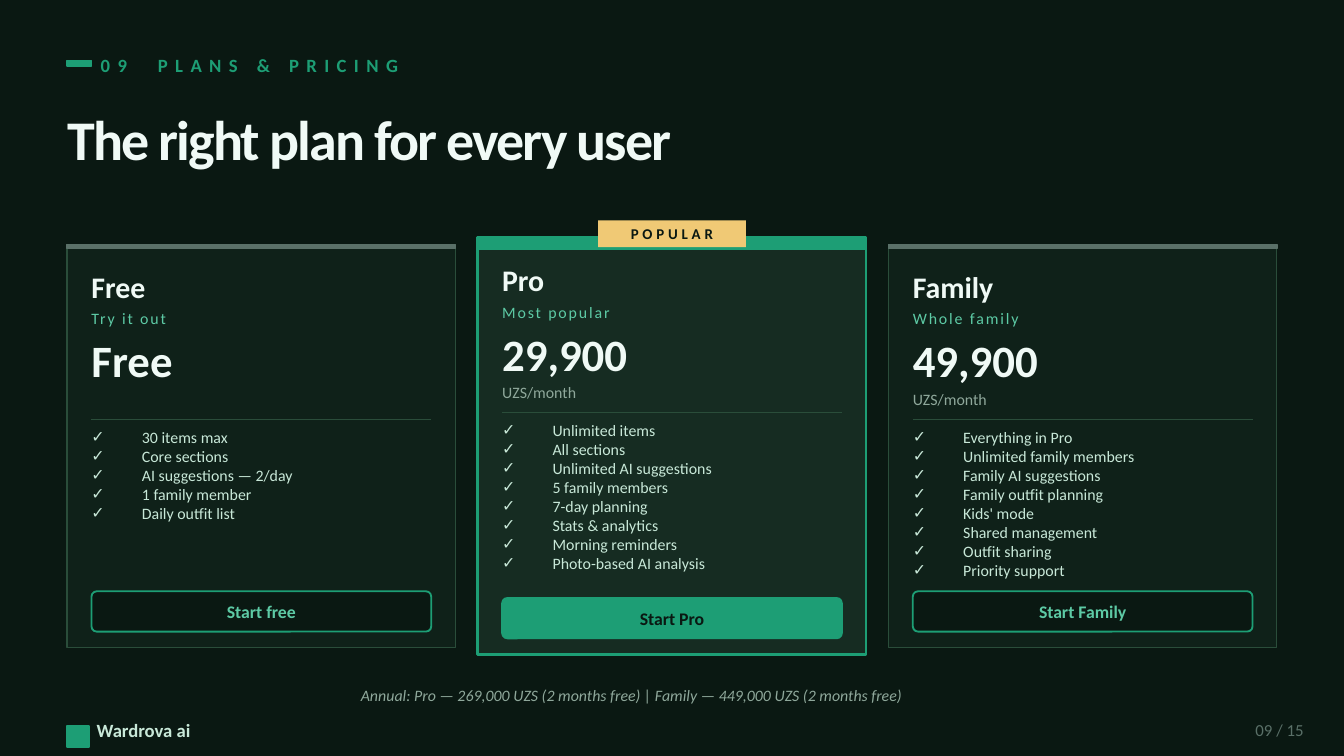
from dataclasses import dataclass

from lxml import etree
from pptx import Presentation
from pptx.dml.color import RGBColor
from pptx.enum import shapes, text
from pptx.oxml import ns
from pptx.util import Pt


@dataclass(frozen=True)
class Theme:
    font: str = "Calibri"
    background: str = "0A1812"
    card: str = "0F2119"
    featured_card: str = "162C22"
    border: str = "2A4D3A"
    accent: str = "1D9E75"
    mint: str = "5DCAA5"
    gold: str = "F0C975"
    white: str = "F0FAF6"
    pale: str = "C8E8D8"
    muted: str = "8FA89B"
    dim: str = "5A7068"
    title_size: float = 30
    price_size: float = 24
    name_size: float = 16
    label_size: float = 10
    button_size: float = 9.5
    page_size: float = 9
    body_size: float = 8.5
    badge_size: float = 8


theme = Theme()
LEFT, CENTER, RIGHT = text.PP_ALIGN.LEFT, text.PP_ALIGN.CENTER, text.PP_ALIGN.RIGHT
RECTANGLE, ROUNDED = shapes.MSO_SHAPE.RECTANGLE, shapes.MSO_SHAPE.ROUNDED_RECTANGLE


def write(shape, content, size, color, bold=False, align=LEFT, tracking=0, italic=False, bullet=None, tab=None):
    frame = shape.text_frame
    frame.text = content
    frame.word_wrap = True
    frame.auto_size = text.MSO_AUTO_SIZE.NONE
    frame.vertical_anchor = text.MSO_ANCHOR.TOP if bullet else text.MSO_ANCHOR.MIDDLE
    frame.margin_left = frame.margin_right = frame.margin_top = frame.margin_bottom = 0
    for paragraph in frame.paragraphs:
        paragraph.alignment = align
        paragraph.space_before = Pt(0)
        properties = paragraph._p.get_or_add_pPr()
        if bullet:
            properties.set("marL", str(Pt(27)))
            properties.set("indent", str(Pt(-27)))
            etree.SubElement(properties, ns.qn("a:buChar"), char=bullet)
        if tab:
            tabs = etree.SubElement(properties, ns.qn("a:tabLst"))
            etree.SubElement(tabs, ns.qn("a:tab"), pos=str(Pt(tab)), algn="l")
        paragraph.font.name = theme.font
        paragraph.font.size = Pt(size)
        paragraph.font.bold = bold
        paragraph.font.italic = italic
        paragraph.font.color.rgb = RGBColor.from_string(color)
        if tracking:
            for run in paragraph.runs:
                run._r.get_or_add_rPr().set("spc", str(tracking * 100))


def block(left, top, width, height, fill, line=None, weight=1, kind=RECTANGLE):
    shape = slide.shapes.add_shape(kind, Pt(left), Pt(top), Pt(width), Pt(height))
    shape.shadow.inherit = False
    shape.fill.solid()
    shape.fill.fore_color.rgb = RGBColor.from_string(fill)
    if line:
        shape.line.color.rgb = RGBColor.from_string(line)
        shape.line.width = Pt(weight)
    else:
        shape.line.fill.background()
    return shape


presentation = Presentation()
presentation.slide_width, presentation.slide_height = Pt(720), Pt(405)
slide = presentation.slides.add_slide(presentation.slide_layouts.get_by_name("Comparison"))
slide.background.fill.solid()
slide.background.fill.fore_color.rgb = RGBColor.from_string(theme.background)

title, *bodies = list(slide.placeholders)
spare = bodies.pop()
spare.element.getparent().remove(spare.element)

block(36, 32.4, 13, 2.9, theme.accent, theme.accent)
title.left, title.top, title.width, title.height = Pt(36), Pt(51.8), Pt(648), Pt(44.6)
write(title, "The right plan for every user", theme.title_size, theme.white, True, tracking=-1)

plans = [
    ("Free", "Try it out", "Free", "", "Start free",
     ["30 items max", "Core sections", "AI suggestions — 2/day", "1 family member", "Daily outfit list"]),
    ("Pro", "Most popular", "29,900", "UZS/month", "Start Pro",
     ["Unlimited items", "All sections", "Unlimited AI suggestions", "5 family members",
      "7-day planning", "Stats & analytics", "Morning reminders", "Photo-based AI analysis"]),
    ("Family", "Whole family", "49,900", "UZS/month", "Start Family",
     ["Everything in Pro", "Unlimited family members", "Family AI suggestions", "Family outfit planning",
      "Kids' mode", "Shared management", "Outfit sharing", "Priority support"]),
]
card_width, card_gap, padding = 208, 12, 13
inner_width = card_width - 2 * padding

for index, (name, tagline, price, unit, action, features) in enumerate(plans):
    featured = name == "Pro"
    left = 36 + index * (card_width + card_gap)
    inner_left = left + padding
    top, height = (127.4, 223.2) if featured else (131, 216)

    if featured:
        block(left, top, card_width, height, theme.featured_card, theme.accent, 1.5)
        block(left, top, card_width, 5.8, theme.accent, theme.accent)
        badge = block(left + (card_width - 79.2) / 2, 118.1, 79.2, 14.4, theme.gold)
        write(badge, "POPULAR", theme.badge_size, theme.background, True, CENTER, 2)
    else:
        block(left, top, card_width, height, theme.card, theme.border, 0.75)
        block(left, top, card_width, 2.2, theme.dim, theme.dim)

    for content, offset, line_height, size, color, bold, tracking in [
        (name, 11.5, 21.6, theme.name_size, theme.white, True, 0),
        (tagline, 33.1, 13, theme.body_size, theme.mint, False, 1),
        (price, 47.5, 28.8, theme.price_size, theme.white, True, 0),
        (unit, 76.3, 13, theme.body_size, theme.muted, False, 0),
    ]:
        if content:
            box = slide.shapes.add_textbox(Pt(inner_left), Pt(top + offset), Pt(inner_width), Pt(line_height))
            write(box, content, size, color, bold, tracking=tracking)

    rule_top = Pt(top + 93.6)
    rule = slide.shapes.add_connector(
        shapes.MSO_CONNECTOR.STRAIGHT, Pt(inner_left), rule_top, Pt(inner_left + inner_width), rule_top)
    rule.line.color.rgb = RGBColor.from_string(theme.border)
    rule.line.width = Pt(0.75)
    etree.SubElement(rule.element.spPr, ns.qn("a:effectLst"))

    body = bodies[index]
    body.left, body.top = Pt(inner_left), Pt(top + 97.9)
    body.width, body.height = Pt(inner_width), Pt(height - 134)
    write(body, "\n".join(features), theme.body_size, theme.pale, bullet="✓")
    body.element.getparent().append(body.element)

    button = block(inner_left, top + height - 30.2, inner_width, 21.6,
                   theme.accent if featured else theme.background, theme.accent, kind=ROUNDED)
    button.adjustments[0] = 0.13
    write(button, action, theme.button_size, theme.background if featured else theme.mint, True, CENTER)

block(36, 388.8, 11.5, 11.5, theme.accent, theme.accent)

for content, left, top, width, height, style in [
    ("09\tPLANS & PRICING", 54, 24.5, 288, 20.2,
     dict(size=theme.label_size, color=theme.accent, bold=True, tracking=4, tab=30.6)),
    ("Annual: Pro — 269,000 UZS (2 months free) | Family — 449,000 UZS (2 months free)", 36, 364.3, 604.8, 15.8,
     dict(size=theme.body_size, color=theme.muted, italic=True, align=CENTER)),
    ("Wardrova ai", 51.8, 383, 216, 15.8, dict(size=theme.label_size, color=theme.pale, bold=True)),
    ("09 / 15", 648, 383, 50.4, 15.8, dict(size=theme.page_size, color=theme.dim, align=RIGHT)),
]:
    box = slide.shapes.add_textbox(Pt(left), Pt(top), Pt(width), Pt(height))
    write(box, content, **style)

presentation.save("out.pptx")
